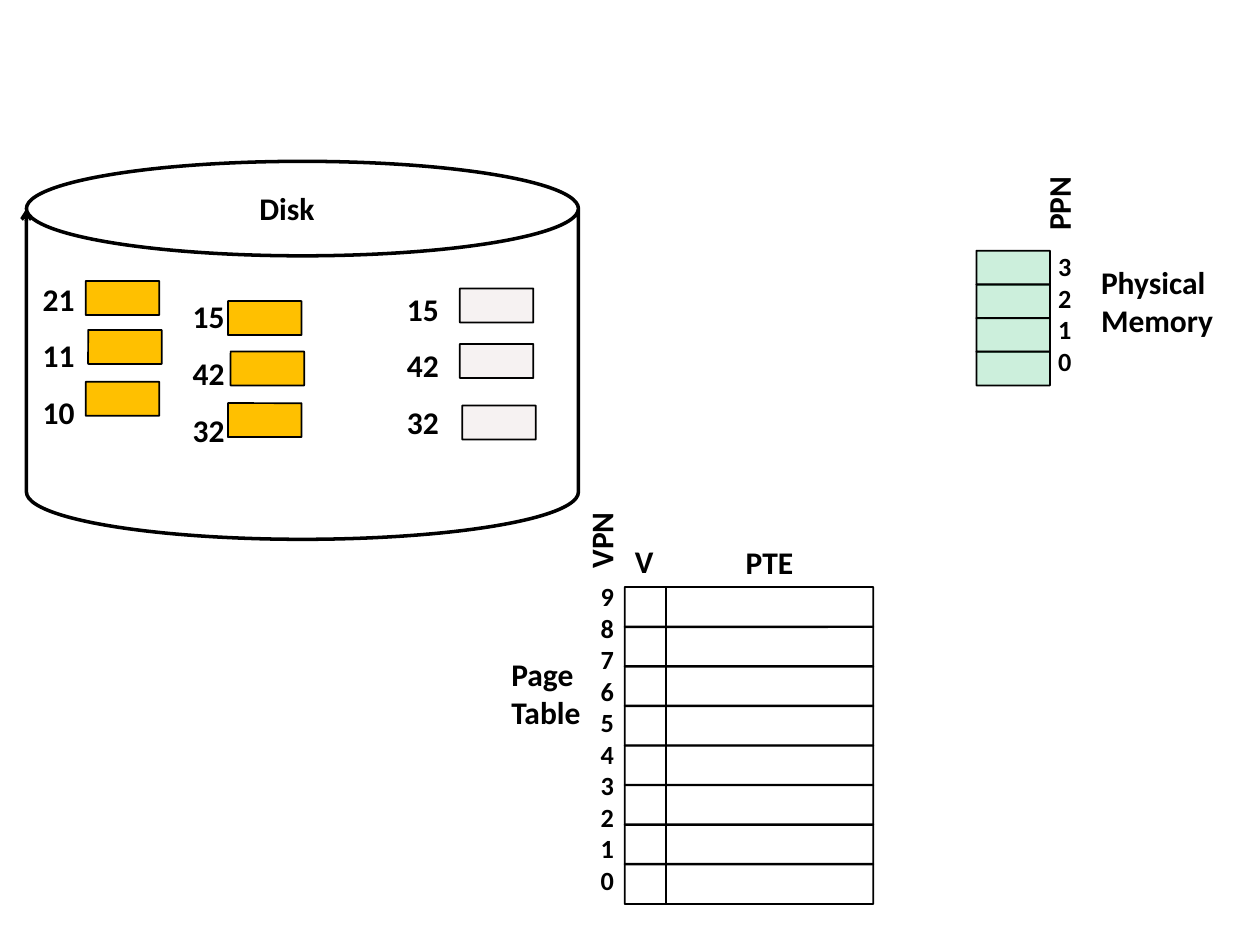
"""Build a slide showing disk pages, physical memory and an empty page table."""
from lxml import etree
from pptx import Presentation
from pptx import util as u
from pptx.dml.color import RGBColor
from pptx.enum import shapes, text
from pptx.oxml.ns import qn

BLACK = RGBColor(0, 0, 0)
GREEN = RGBColor(0x00, 0xB0, 0x50)
AMBER = RGBColor(0xFF, 0xC0, 0x00)
PALE = RGBColor(0xF6, 0xF2, 0xF2)

PAGE_SIZE = (42, 19.4)
MEMORY_LEFT, MEMORY_TOP, MEMORY_PITCH = 558, 143.3, 19.2
TABLE_LEFT, TABLE_TOP, TABLE_PITCH = 357, 335.4, 22.6
ROW_SIZE = (142, 23)
VALID_WIDTH = 23.8
DISK_BOX = (15.1, 92.2, 315.4, 216)

PHYSICAL_PAGES = ["3", "2", "1", "0"]
VIRTUAL_PAGES = ["9", "8", "7", "6", "5", "4", "3", "2", "1", "0"]
TABLE_ROWS = 8

MEMORY_LABELS = [
    (PHYSICAL_PAGES, (597.6, 139.7, 22.3, 79.9), {"size": 15}),
    (["Physical", "Memory"], (622.1, 146.9, 79.2, 51.1), {}),
    (["PPN"], (590.4, 100.1, 36, 38.9), {"vertical": True}),
]
TABLE_LABELS = [
    (["V"], (355.7, 306, 25.2, 28.8), {}),
    (["PTE"], (419, 306.9, 41.8, 28.8), {}),
    (["Page", "Table"], (285.1, 370.8, 54.7, 51.1), {}),
    (VIRTUAL_PAGES, (336.2, 328.3, 22.3, 189.4), {"size": 15}),
    (["VPN"], (329, 292.3, 36, 39.6), {"vertical": True}),
]
DISK_LABELS = [
    (["Disk"], (141.1, 104.4, 46.1, 28.8), {}),
    (["21", "11", "10"], (17.3, 145.4, 33.1, 102.2), {"spacing": 1.5}),
    (["15", "42", "32"], (103, 155.5, 33.1, 105.1), {"spacing": 1.5}),
    (["15", "42", "32"], (225.4, 151.2, 33.1, 105.1), {"spacing": 1.5}),
]
DISK_PAGES = [
    (AMBER, [(49, 160.6), (50.4, 188.6), (49, 218.2)]),
    (AMBER, [(130.3, 172.1), (131.8, 200.9), (130.3, 230.4)]),
    (PALE, [(262.8, 164.9), (262.8, 196.6), (264.2, 231.8)]),
]


def points(values):
    return [u.Pt(value) for value in values]


def add_outline(group, preset, box, color=None, width=1):
    shape = group.shapes.add_shape(preset, *points(box))
    shape.shadow.inherit = False
    if color is None:
        shape.fill.background()
    else:
        shape.fill.solid()
        shape.fill.fore_color.rgb = color
    shape.line.color.rgb = BLACK
    shape.line.width = u.Pt(width)
    return shape


def add_cell(group, box, color=None):
    shape = add_outline(group, shapes.MSO_SHAPE.ROUNDED_RECTANGLE, box, color)
    shape.adjustments[0] = 0.01
    return shape


def add_divider(group, left, top, height):
    line = group.shapes.add_connector(
        shapes.MSO_CONNECTOR.STRAIGHT, *points((left, top, left, top + height)))
    line.line.color.rgb = BLACK
    line.line.width = u.Pt(1)
    etree.SubElement(line.element.spPr, qn("a:effectLst"))


def add_labels(group, labels):
    for lines, box, options in labels:
        add_label(group, lines, box, **options)


def add_label(group, lines, box, size=18, spacing=None, vertical=False):
    frame = group.shapes.add_textbox(*points(box)).text_frame
    frame.word_wrap = False
    frame.auto_size = text.MSO_AUTO_SIZE.SHAPE_TO_FIT_TEXT
    if vertical:
        frame._txBody.bodyPr.set("vert", "vert270")
    frame.text = "\n".join(lines)
    for paragraph in frame.paragraphs:
        paragraph.font.name = "Calibri"
        paragraph.font.size = u.Pt(size)
        paragraph.font.bold = True
        paragraph.font.color.rgb = BLACK
        if spacing:
            paragraph.line_spacing = spacing


def add_memory(slide):
    group = slide.shapes.add_group_shape()
    for index in range(len(PHYSICAL_PAGES)):
        top = MEMORY_TOP + index * MEMORY_PITCH
        cell = add_cell(group, (MEMORY_LEFT, top, *PAGE_SIZE), GREEN)
        color = cell.element.spPr.find(qn("a:solidFill"))[0]
        etree.SubElement(color, qn("a:alpha"), val="20000")
    add_labels(group, MEMORY_LABELS)


def add_page_table(slide):
    group = slide.shapes.add_group_shape()
    for index in range(TABLE_ROWS):
        top = TABLE_TOP + index * TABLE_PITCH
        add_cell(group, (TABLE_LEFT, top, *ROW_SIZE))
        add_divider(group, TABLE_LEFT + VALID_WIDTH, top, ROW_SIZE[1])
    add_labels(group, TABLE_LABELS)


def add_disk(slide):
    group = slide.shapes.add_group_shape()
    disk = add_outline(group, shapes.MSO_SHAPE.CAN, DISK_BOX, width=2)
    etree.SubElement(disk.line._get_or_add_ln(), qn("a:tailEnd"), type="arrow")
    for color, corners in DISK_PAGES:
        for corner in corners:
            add_cell(group, (*corner, *PAGE_SIZE), color)
    add_labels(group, DISK_LABELS)


def main():
    presentation = Presentation()
    presentation.slide_width, presentation.slide_height = points((720, 540))
    slide = presentation.slides.add_slide(presentation.slide_layouts[6])
    add_memory(slide)
    add_page_table(slide)
    add_disk(slide)
    presentation.save("out.pptx")


if __name__ == "__main__":
    main()
